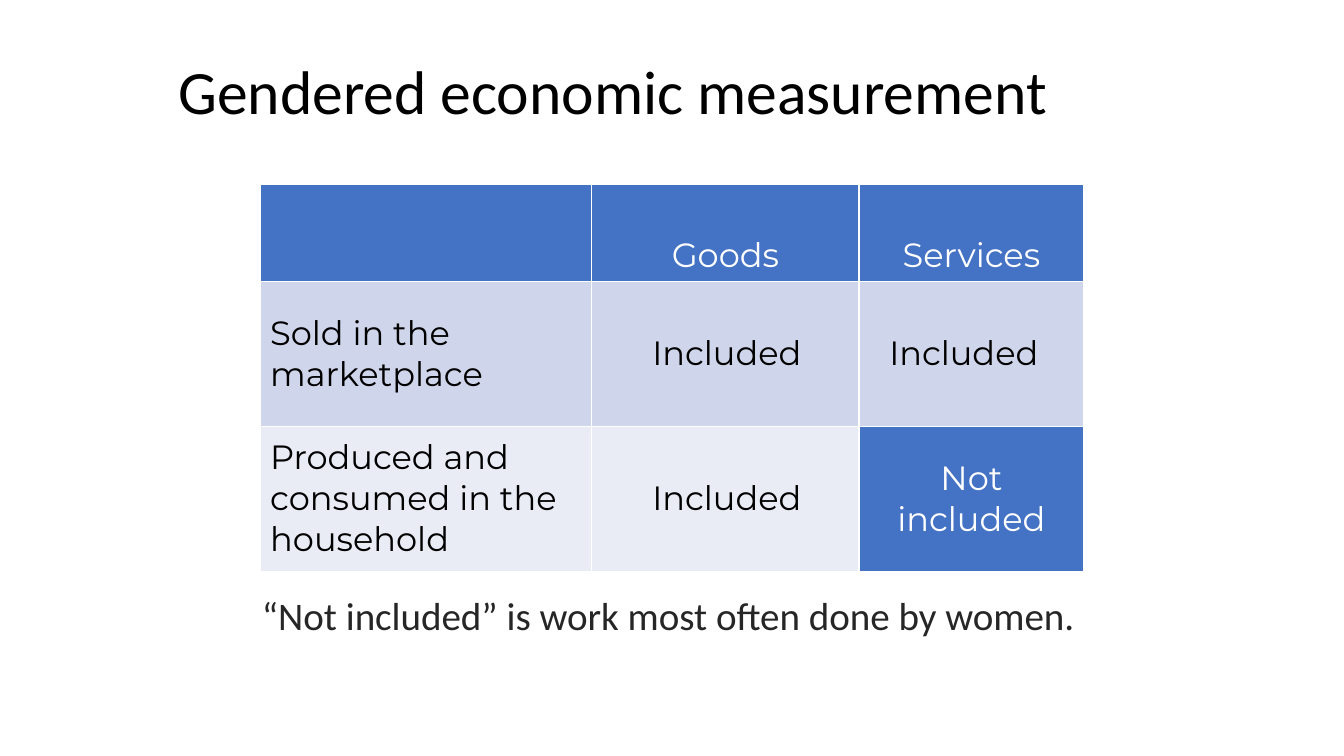
from pptx import Presentation
from pptx.dml.color import RGBColor
from pptx.enum.text import MSO_ANCHOR as Anchor, MSO_AUTO_SIZE as AutoSize, PP_ALIGN as Align
from pptx.util import Inches, Pt

COLORS = {"blue": "4472C4", "band": "CFD5EA", "pale": "E9EBF5",
          "white": "FFFFFF", "black": "000000", "ink": "262626"}

TITLE = "Gendered economic measurement"
CAPTION = "“Not included” is work most often done by women."
ROWS = [
    ["", "Goods", "Services"],
    ["Sold in the marketplace", "Included", "Included"],
    ["Produced and consumed in the household", "Included", "Not included"],
]
ROW_FILLS = ["blue", "band", "pale"]
HIGHLIGHT = "Not included"
COLUMN_WIDTHS = [3.29, 2.65, 2.23]
ROW_HEIGHTS = [0.96, 1.44, 1.44]
COLUMN_INDENTS = [0, 0.5, 0.2]

TITLE_BOX = (1.67, 0.05, 10, 1.77)
TABLE_CORNER = (2.58, 1.83)
CAPTION_BOX = (2.5, 5.66, 8.33, 0.72)

TITLE_FONT = {"name": "Calibri", "size": Pt(44)}
CAPTION_FONT = {"name": "Calibri", "size": Pt(27.9)}
CELL_FONT = {"name": "Montserrat", "size": Pt(24), "bold": False}


def color(name):
    return RGBColor.from_string(COLORS[name])


def write(frame, text, font, font_color, align=Align.LEFT, spacing=None):
    para = frame.paragraphs[0]
    para.alignment = align
    para.line_spacing = spacing
    span = para.add_run()
    span.text = text
    for key, value in font.items():
        setattr(span.font, key, value)
    span.font.color.rgb = color(font_color)
    return para


def place(box, bounds, anchor):
    box.left, box.top, box.width, box.height = map(Inches, bounds)
    frame = box.text_frame
    frame.word_wrap = True
    frame.auto_size = AutoSize.NONE
    frame.vertical_anchor = anchor
    return frame


def fill_cell(cell, text, row, column):
    header = row == 0
    strong = header or text == HIGHLIGHT
    cell.fill.solid()
    cell.fill.fore_color.rgb = color("blue" if strong else ROW_FILLS[row])
    cell.vertical_anchor = Anchor.BOTTOM if header else Anchor.MIDDLE
    if not text:
        return
    para = write(cell.text_frame, text, CELL_FONT,
                 "white" if strong else "black",
                 Align.CENTER if strong else Align.LEFT)
    if not strong and COLUMN_INDENTS[column]:
        properties = para._p.get_or_add_pPr()
        properties.set("marL", str(Inches(COLUMN_INDENTS[column])))
        properties.set("indent", "0")


def add_measurement_table(page):
    size = (sum(COLUMN_WIDTHS), sum(ROW_HEIGHTS))
    table = page.shapes.add_table(len(ROWS), len(COLUMN_WIDTHS),
                                  *map(Inches, TABLE_CORNER + size)).table
    for column, width in zip(table.columns, COLUMN_WIDTHS):
        column.width = Inches(width)
    for row, height in zip(table.rows, ROW_HEIGHTS):
        row.height = Inches(height)
    for r, texts in enumerate(ROWS):
        for c, text in enumerate(texts):
            fill_cell(table.cell(r, c), text, r, c)


def main():
    deck = Presentation()
    deck.slide_width, deck.slide_height = Inches(13.33), Inches(7.5)
    page = deck.slides.add_slide(deck.slide_layouts[5])

    title = place(page.shapes.title, TITLE_BOX, Anchor.MIDDLE)
    write(title, TITLE, TITLE_FONT, "black", spacing=0.9)
    add_measurement_table(page)
    caption_box = page.shapes.add_textbox(*map(Inches, CAPTION_BOX))
    caption = place(caption_box, CAPTION_BOX, Anchor.BOTTOM)
    write(caption, CAPTION, CAPTION_FONT, "ink", spacing=0.8)

    deck.save("out.pptx")


if __name__ == "__main__":
    main()
